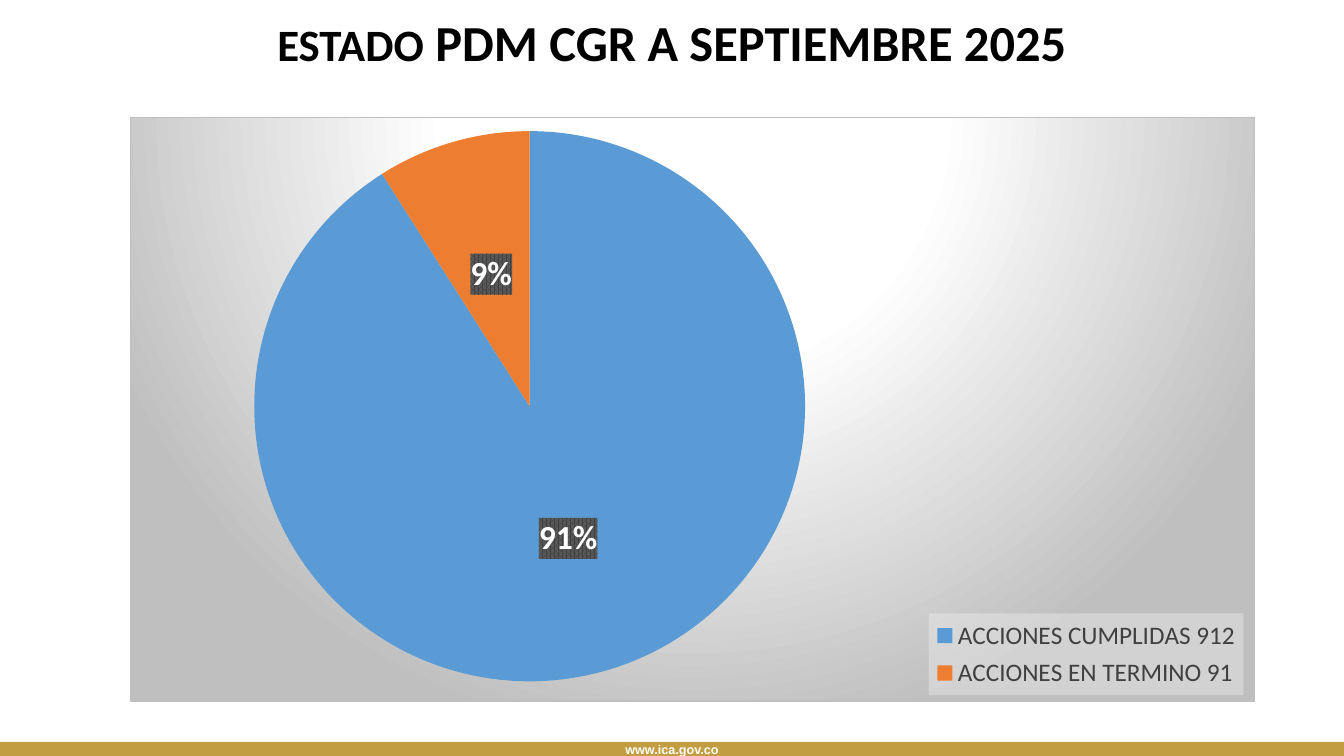
from lxml import etree
from pptx import Presentation
from pptx.chart.data import CategoryChartData
from pptx.dml.color import RGBColor
from pptx.enum.chart import XL_CHART_TYPE, XL_LABEL_POSITION, XL_LEGEND_POSITION
from pptx.enum.shapes import MSO_SHAPE
from pptx.enum.text import MSO_ANCHOR, PP_ALIGN
from pptx.oxml import parse_xml
from pptx.oxml.ns import nsdecls, qn
from pptx.util import Inches, Pt

PIE, RECTANGLE = XL_CHART_TYPE.PIE, MSO_SHAPE.RECTANGLE
CENTER, TOP, MIDDLE = PP_ALIGN.CENTER, MSO_ANCHOR.TOP, MSO_ANCHOR.MIDDLE

SLIDE_SIZE = (13.33, 7.5)
TITLE_BOX = (1.18, 0.13, 10.97, 0.78)
TITLE = [("ESTADO", 32), (" PDM CGR A SEPTIEMBRE 2025", 36)]
FOOTER_BOX = (0, 7.36, 13.33, 0.15)
FOOTER = "www.ica.gov.co"
CHART_BOX = (1.29, 1.16, 11.16, 5.8)
ACTIONS = [  # category, percent, colour
    ("ACCIONES CUMPLIDAS 912", 91, "5B9BD5"),
    ("ACCIONES EN TERMINO 91", 9, "ED7D31"),
]
# Fractions of the chart: x, y, width, height
PIE_AREA = (0.11, 0.02, 0.49, 0.95)
LEGEND_AREA = (0.71, 0.85, 0.28, 0.14)

GRADIENT_STOPS = [(0, "FFFFFF"), (39, "FFFFFF"), (100, "BFBFBF")]
BACKGROUND = (
    '<a:gradFill><a:gsLst>'
    + "".join(f'<a:gs pos="{percent * 1000}"><a:srgbClr val="{color}"/></a:gs>'
              for percent, color in GRADIENT_STOPS)
    + '</a:gsLst><a:path path="circle">'
    '<a:fillToRect l="50000" t="-80000" r="50000" b="180000"/></a:path></a:gradFill>'
    '<a:ln w="9525"><a:solidFill><a:srgbClr val="BFBFBF"/></a:solidFill></a:ln>'
)
LABEL_FILL = (
    '<a:pattFill prst="pct75"><a:fgClr><a:srgbClr val="404040"/></a:fgClr>'
    '<a:bgClr><a:srgbClr val="595959"/></a:bgClr></a:pattFill>'
)
LEGEND_FILL = (
    '<a:solidFill><a:srgbClr val="F2F2F2"><a:alpha val="39000"/></a:srgbClr></a:solidFill>'
)


def rgb(color):
    return RGBColor.from_string(color)


def inches(box):
    return [Inches(length) for length in box]


def set_font(font, name, size, color, bold=False):
    font.name, font.size, font.bold = name, Pt(size), bold
    font.color.rgb = rgb(color)


def style_part(element, fill):
    """Give a chart part its fill and line, just ahead of its text properties."""
    properties = parse_xml(f'<c:spPr {nsdecls("c", "a")}>{fill}</c:spPr>')
    element.find(qn("c:txPr")).addprevious(properties)


def make_layout(area, inner=False):
    """Return a manual layout element for a part of the chart."""
    layout = parse_xml(f'<c:layout {nsdecls("c")}><c:manualLayout/></c:layout>')
    settings = [("layoutTarget", "inner")] if inner else []
    settings += [("xMode", "edge"), ("yMode", "edge")]
    settings += zip("xywh", area)
    for name, value in settings:
        etree.SubElement(layout[0], qn(f"c:{name}")).set("val", str(value))
    return layout


def add_title(slide):
    frame = slide.shapes.add_textbox(*inches(TITLE_BOX)).text_frame
    frame.word_wrap = True
    frame.vertical_anchor = TOP
    paragraph = frame.paragraphs[0]
    paragraph.alignment = CENTER
    paragraph.line_spacing = 0.9
    for text, size in TITLE:
        run = paragraph.add_run()
        run.text = text
        set_font(run.font, "Calibri", size, "000000", bold=True)


def add_footer(slide):
    bar = slide.shapes.add_shape(RECTANGLE, *inches(FOOTER_BOX))
    bar.shadow.inherit = False
    bar.fill.solid()
    bar.fill.fore_color.rgb = rgb("C39D41")
    bar.line.fill.background()
    frame = bar.text_frame
    frame.text = FOOTER
    frame.vertical_anchor = MIDDLE
    paragraph = frame.paragraphs[0]
    paragraph.alignment = CENTER
    set_font(paragraph.runs[0].font, "Arial", 9, "FFFFFF", bold=True)


def add_pie(slide):
    data = CategoryChartData()
    data.categories = [name for name, _, _ in ACTIONS]
    data.add_series("Series 1", [percent for _, percent, _ in ACTIONS])
    chart = slide.shapes.add_chart(PIE, *inches(CHART_BOX), data).chart
    chart.has_title = False
    set_font(chart.font, "Calibri", 10, "000000")
    chart_space = chart.font._element.getroottree().getroot()
    style_part(chart_space, BACKGROUND)

    plot = chart.plots[0]
    plot.vary_by_categories = True
    plot_area = chart_space.find(f'{qn("c:chart")}/{qn("c:plotArea")}')
    for old_layout in plot_area.findall(qn("c:layout")):
        plot_area.remove(old_layout)
    plot_area.insert(0, make_layout(PIE_AREA, inner=True))

    series = plot.series[0]
    for index, (_, _, color) in enumerate(ACTIONS):
        fill = series.points[index].format.fill
        fill.solid()
        fill.fore_color.rgb = rgb(color)

    labels = series.data_labels
    labels.show_percentage = True
    labels.show_value = False
    labels.number_format = "0%"
    labels.number_format_is_linked = False
    labels.position = XL_LABEL_POSITION.CENTER
    set_font(labels.font, "Calibri", 24, "FFFFFF", bold=True)
    style_part(labels._element, LABEL_FILL)

    chart.has_legend = True
    legend = chart.legend
    legend.position = XL_LEGEND_POSITION.RIGHT
    legend.include_in_layout = False
    set_font(legend.font, "Calibri", 18, "404040")
    for old_layout in legend._element.findall(qn("c:layout")):
        legend._element.remove(old_layout)
    legend._element.find(qn("c:overlay")).addprevious(make_layout(LEGEND_AREA))
    style_part(legend._element, LEGEND_FILL)


def main():
    presentation = Presentation()
    presentation.slide_width, presentation.slide_height = inches(SLIDE_SIZE)
    slide = presentation.slides.add_slide(presentation.slide_layouts[6])
    add_footer(slide)
    add_title(slide)
    add_pie(slide)
    presentation.save("out.pptx")


if __name__ == "__main__":
    main()
